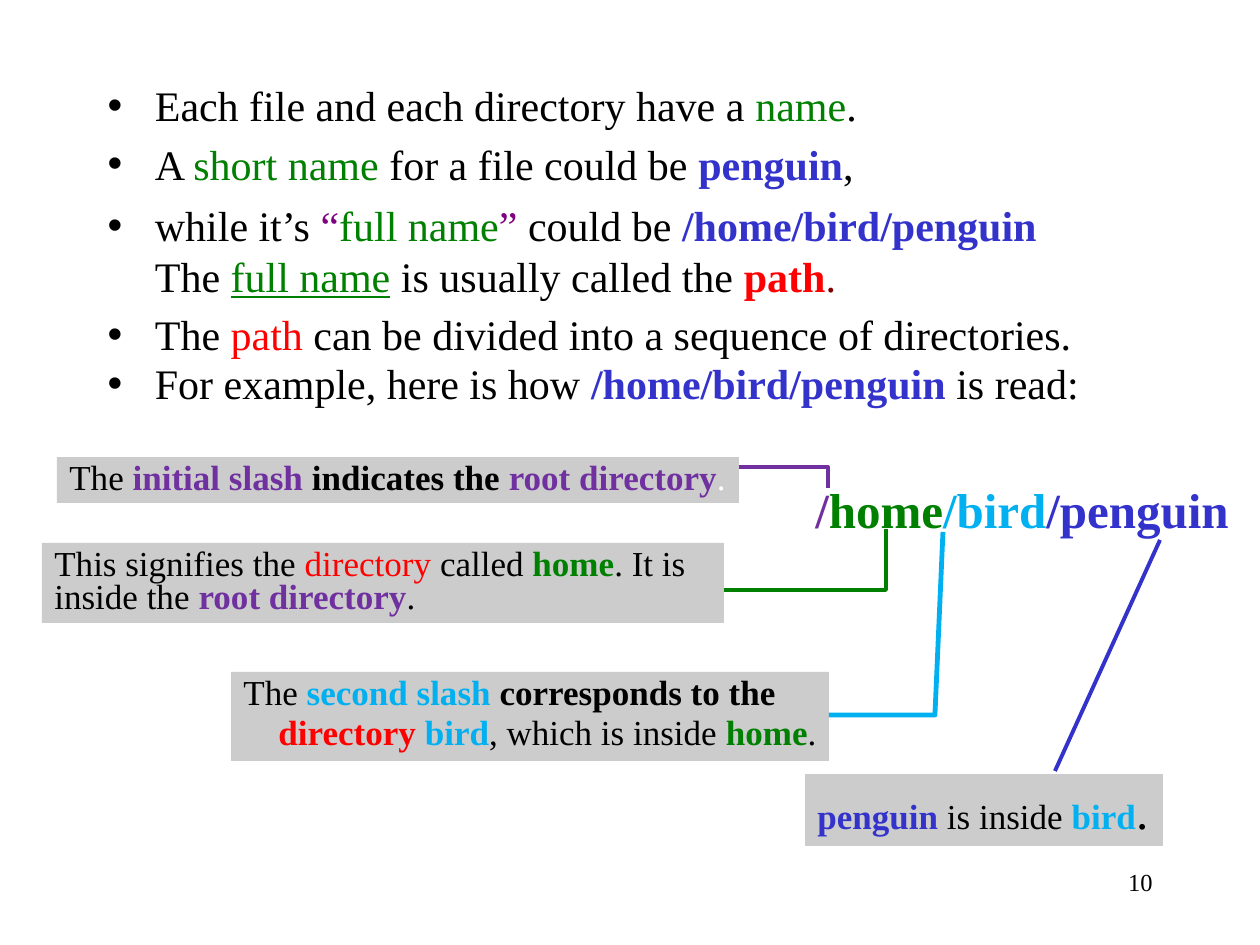
from pptx import Presentation
from pptx.dml.color import RGBColor
from pptx.enum.shapes import MSO_CONNECTOR, MSO_SHAPE
from pptx.enum.text import MSO_ANCHOR, MSO_AUTO_SIZE, PP_ALIGN
from pptx.oxml.ns import qn
from pptx.util import Pt
from lxml.etree import SubElement

PX = 914400 / 126
FONT = "Times New Roman"
COLORS = {
    "black": "000000", "white": "FFFFFF", "gray": "CCCCCC", "green": "008000",
    "blue": "3333CC", "purple": "800080", "violet": "7030A0", "sky": "00B0F0",
    "red": "FF0000", "maroon": "800000",
}

# Content: a run is (text, color, style), where style holds b (bold), u (underline)
BREAK = ("\n", "black", "")
BULLETS = [
    [("Each file and each directory have a ", "black", ""), ("name", "green", ""),
     (".", "black", "")],
    [("A ", "black", ""), ("short name ", "green", ""),
     ("for a file could be ", "black", ""), ("penguin", "blue", "b"), (",", "black", "")],
    [("while it’s ", "black", ""), ("“", "purple", ""), ("full name", "green", ""),
     ("” ", "purple", ""), ("could be ", "black", ""), ("/home/bird/penguin", "blue", "b"),
     BREAK, ("The ", "black", ""), ("full name", "green", "u"),
     (" is usually called the ", "black", ""), ("path", "red", "b"), (".", "maroon", "")],
    [("The ", "black", ""), ("path", "red", ""),
     (" can be divided into a sequence of directories.", "black", "")],
    [("For example, here is how ", "black", ""), ("/home/bird/penguin", "blue", "b"),
     (" is read:", "black", "")],
]
FULL_PATH = [("/", "violet", "b"), ("home", "green", "b"), ("/bird", "sky", "b"),
             ("/penguin", "blue", "b")]

# Notes: box (left, top, width, height), wrap, line spacing, paragraphs
NOTES = [
    ((57, 457, 682, 46), True, 0.8, [
        [("The ", "black", ""), ("initial slash ", "violet", "b"),
         ("indicates the ", "black", "b"), ("root directory", "violet", "b"),
         (".", "white", "")]]),
    ((42, 543, 682, 80), True, 0.8, [
        [("This signifies the ", "black", ""), ("directory ", "red", ""),
         ("called ", "black", ""), ("home", "green", "b"),
         (". It is inside the ", "black", ""), ("root directory", "violet", "b"),
         (".", "black", "")]]),
    ((231, 672, 598, 89), False, 0.8, [
        [("The ", "black", ""), ("second slash ", "sky", "b"),
         ("corresponds to the", "black", "b")],
        [("directory ", "red", "b"), ("bird", "sky", "b"),
         (", which is inside ", "black", ""), ("home", "green", "b"), (".", "black", "")]]),
    ((805, 774, 358, 72), False, 1, [
        [("penguin", "blue", "b"), (" is inside ", "black", ""), ("bird", "sky", "b"),
         (".", "black", "", 28)]]),
]
# Leaders from the notes to the parts of the path: color, width, points
LEADERS = [
    ("violet", 2.25, [(739, 467), (828, 467), (828, 488)]),
    ("green", 2.25, [(724, 590), (886, 590), (886, 529)]),
    ("sky", 2.75, [(943, 532), (935, 715), (829, 715)]),
]
PENGUIN_LINE = [(1055, 771), (1160, 540)]


def px(*values):
    return [round(v * PX) for v in values]


def rgb(name):
    return RGBColor.from_string(COLORS[name])


def add_runs(p, runs, size):
    for text, color, style, *own_size in runs:
        if text == "\n":
            p.add_line_break()
            continue
        r = p.add_run()
        r.text = text
        f = r.font
        f.name, f.size = FONT, Pt(own_size[0] if own_size else size)
        f.color.rgb = rgb(color)
        f.bold, f.underline = "b" in style, "u" in style


def add_text(s, box, runs, size, align=PP_ALIGN.LEFT, wrap=True):
    tf = s.shapes.add_textbox(*px(*box)).text_frame
    tf.word_wrap = wrap
    tf.paragraphs[0].alignment = align
    add_runs(tf.paragraphs[0], runs, size)


def add_note(s, box, wrap, spacing, paragraphs):
    sp = s.shapes.add_shape(MSO_SHAPE.RECTANGLE, *px(*box))
    sp.shadow.inherit = False
    sp.fill.solid()
    sp.fill.fore_color.rgb = rgb("gray")
    sp.line.fill.background()
    tf = sp.text_frame
    tf.word_wrap, tf.vertical_anchor = wrap, MSO_ANCHOR.TOP
    for i, runs in enumerate(paragraphs):
        p = tf.add_paragraph() if i else tf.paragraphs[0]
        p.alignment, p.line_spacing = PP_ALIGN.LEFT, spacing
        if i:
            p.space_before = Pt(4)
            p._p.get_or_add_pPr().set("marL", str(Pt(20)))
        add_runs(p, runs, 20)


def style_line(shape, color, width):
    shape.line.color.rgb = rgb(color)
    shape.line.width = Pt(width)


prs = Presentation()
prs.slide_width, prs.slide_height = px(1260, 945)
s = prs.slides.add_slide(prs.slide_layouts[1])
title, body = s.placeholders
title.element.getparent().remove(title.element)

# Bullet list
body.left, body.top, body.width, body.height = px(95, 73, 1081, 368)
tf = body.text_frame
tf.auto_size = MSO_AUTO_SIZE.NONE
for i, runs in enumerate(BULLETS):
    p = tf.add_paragraph() if i else tf.paragraphs[0]
    add_runs(p, runs, 24)
p.line_spacing = 0.8

# Path with its notes and leaders
add_text(s, (803, 473, 443, 72), FULL_PATH, 28, wrap=False)
for note in NOTES:
    add_note(s, *note)
for color, width, points in LEADERS:
    builder = s.shapes.build_freeform(*points[0], scale=PX)
    builder.add_line_segments(points[1:], close=False)
    leader = builder.convert_to_shape()
    leader.shadow.inherit = False
    leader.fill.background()
    style_line(leader, color, width)
start, end = PENGUIN_LINE
line = s.shapes.add_connector(MSO_CONNECTOR.STRAIGHT, *px(*start, *end))
style_line(line, "blue", 2.25)
SubElement(line.element.spPr, qn("a:effectLst"))

# Page number
add_text(s, (903, 861, 262, 63), [("10", "black", "")], 14, PP_ALIGN.RIGHT)

prs.save("out.pptx")
